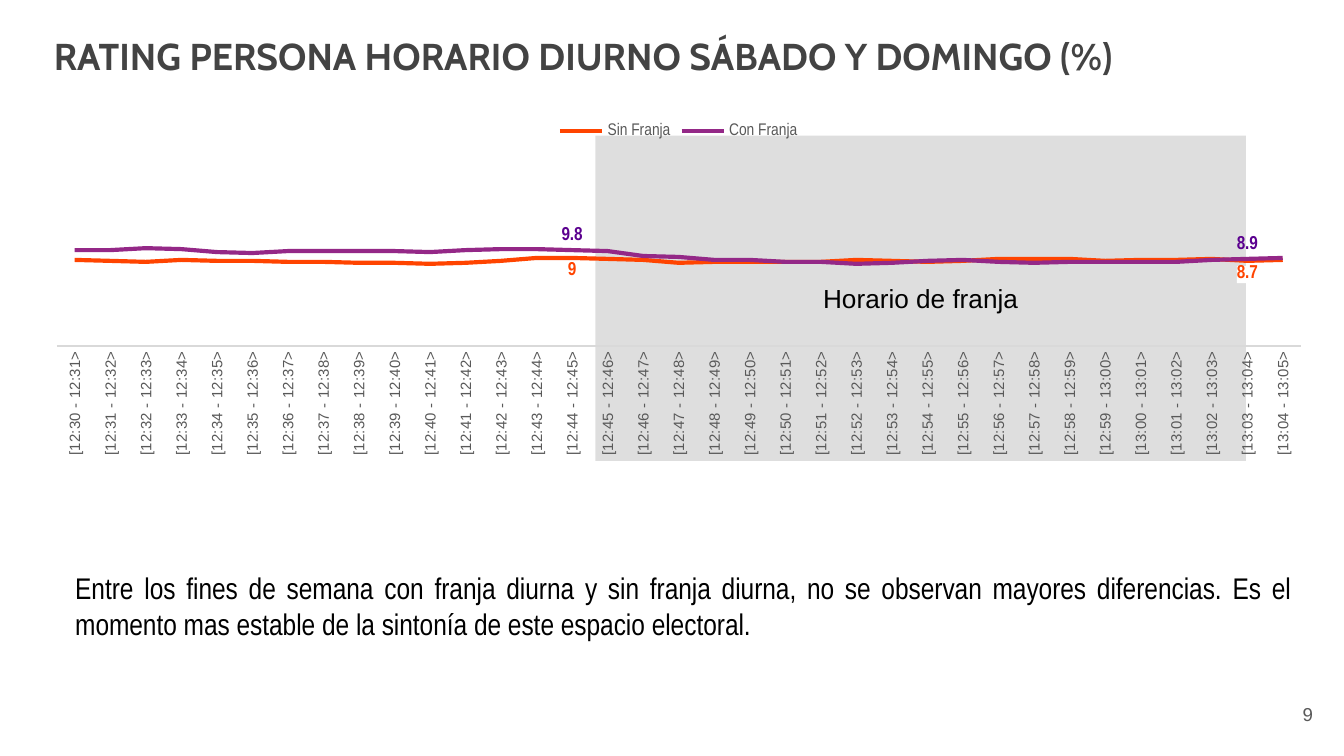
from dataclasses import dataclass

from lxml import etree
from pptx import Presentation
from pptx.chart.data import CategoryChartData
from pptx.dml.color import RGBColor
from pptx.enum.chart import XL_CHART_TYPE, XL_LABEL_POSITION, XL_LEGEND_POSITION, XL_TICK_MARK
from pptx.enum.shapes import MSO_SHAPE
from pptx.enum.text import MSO_ANCHOR, MSO_AUTO_SIZE, PP_ALIGN
from pptx.oxml import parse_xml
from pptx.oxml.ns import nsdecls, qn
from pptx.util import Pt

LINE = XL_CHART_TYPE.LINE
ABOVE, BELOW = XL_LABEL_POSITION.ABOVE, XL_LABEL_POSITION.BELOW
LEGEND_TOP = XL_LEGEND_POSITION.TOP
NO_TICK = XL_TICK_MARK.NONE
RECTANGLE = MSO_SHAPE.RECTANGLE
TOP, MIDDLE = MSO_ANCHOR.TOP, MSO_ANCHOR.MIDDLE
NO_AUTOFIT = MSO_AUTO_SIZE.NONE
LEFT, CENTER, RIGHT, JUSTIFY = PP_ALIGN.LEFT, PP_ALIGN.CENTER, PP_ALIGN.RIGHT, PP_ALIGN.JUSTIFY


@dataclass(frozen=True)
class TextStyle:
    size: float
    font: str
    color: str
    bold: bool = False

    def apply(self, font):
        font.size = Pt(self.size)
        font.name = self.font
        font.bold = self.bold
        font.color.rgb = RGBColor.from_string(self.color)


@dataclass(frozen=True)
class Theme:
    title: TextStyle = TextStyle(20, "Cabin", "434343", True)
    body: TextStyle = TextStyle(16, "Arial Narrow", "000000")
    band_label: TextStyle = TextStyle(14, "Arial", "000000")
    page: TextStyle = TextStyle(10, "Arial", "595959")
    chart: TextStyle = TextStyle(10, "Arial", "000000")
    axis: TextStyle = TextStyle(8, "Arial", "595959")
    legend: TextStyle = TextStyle(9, "Arial Narrow", "595959")
    without_label: TextStyle = TextStyle(10, "Arial Narrow", "FF4400", True)
    with_label: TextStyle = TextStyle(10, "Arial Narrow", "5B008F", True)
    without_line: str = "FF4400"
    with_line: str = "942887"
    axis_line: str = "D9D9D9"
    label_fill: str = "FFFFFF"
    band: str = "9B9B9B"
    band_alpha: int = 32


@dataclass(frozen=True)
class RatingSeries:
    name: str
    values: tuple
    color: str
    label: TextStyle
    position: object


class SlideBuilder:
    def __init__(self, slide, theme):
        self.slide = slide
        self.theme = theme

    def place(self, shape, box):
        shape.left, shape.top, shape.width, shape.height = map(Pt, box)

    def set_text(self, shape, text, style, alignment, anchor=TOP, inset=(7.2, 3.6)):
        frame = shape.text_frame
        frame.word_wrap = True
        frame.auto_size = NO_AUTOFIT
        frame.vertical_anchor = anchor
        frame.margin_left = frame.margin_right = Pt(inset[0])
        frame.margin_top = frame.margin_bottom = Pt(inset[1])
        paragraph = frame.paragraphs[0]
        paragraph.alignment = alignment
        paragraph.space_before = Pt(0)
        run = paragraph.add_run()
        run.text = text
        style.apply(run.font)
        return paragraph

    def title(self, text, box):
        shape = self.slide.shapes.title
        self.place(shape, box)
        self.set_text(shape, text, self.theme.title, LEFT, inset=(7.2, 7.2))

    def body(self, text, box):
        shape = self.slide.placeholders[1]
        self.place(shape, box)
        paragraph = self.set_text(shape, text, self.theme.body, JUSTIFY)
        properties = paragraph._p.get_or_add_pPr()
        properties.set("marL", "0")
        properties.set("indent", "0")
        etree.SubElement(properties, qn("a:buNone"))

    def page_number(self, text, box):
        shape = self.slide.shapes.add_textbox(*map(Pt, box))
        self.set_text(shape, text, self.theme.page, RIGHT, MIDDLE, (7.2, 7.2))

    def band(self, text, box):
        shape = self.slide.shapes.add_shape(RECTANGLE, *map(Pt, box))
        shape.shadow.inherit = False
        shape.line.fill.background()
        shape.fill.solid()
        shape.fill.fore_color.rgb = RGBColor.from_string(self.theme.band)
        color = shape._element.spPr.find(".//" + qn("a:srgbClr"))
        etree.SubElement(color, qn("a:alpha"), val=str(self.theme.band_alpha * 1000))
        self.set_text(shape, text, self.theme.band_label, CENTER, MIDDLE)

    def line_chart(self, categories, ratings, labelled, plot_area, box):
        data = CategoryChartData(number_format="General")
        data.categories = categories
        for rating in ratings:
            data.add_series(rating.name, rating.values)
        chart = self.slide.shapes.add_chart(LINE, *map(Pt, box), data).chart
        self.theme.chart.apply(chart.font)
        chart.has_title = False
        chart.has_legend = True
        chart.legend.position = LEGEND_TOP
        chart.legend.include_in_layout = False
        self.theme.legend.apply(chart.legend.font)
        self.axes(chart)
        self.plot_layout(chart, plot_area)
        for series, rating in zip(chart.plots[0].series, ratings):
            series.smooth = False
            series.format.line.width = Pt(2.25)
            series.format.line.color.rgb = RGBColor.from_string(rating.color)
            for index in labelled:
                label = series.points[index].data_label
                rating.label.apply(label.font)
                label.position = rating.position
        self.fill_last_label(chart.plots[0].series[0])

    def axes(self, chart):
        chart.plots[0].vary_by_categories = False
        value_axis = chart.value_axis
        value_axis.minimum_scale, value_axis.maximum_scale = 0, 20
        value_axis.has_major_gridlines = False
        value_axis.visible = False
        category_axis = chart.category_axis
        category_axis.major_tick_mark = category_axis.minor_tick_mark = NO_TICK
        self.theme.axis.apply(category_axis.tick_labels.font)
        category_axis._element.txPr.bodyPr.set("rot", "-5400000")
        category_axis.format.line.width = Pt(0.75)
        category_axis.format.line.color.rgb = RGBColor.from_string(self.theme.axis_line)

    def plot_layout(self, chart, plot_area):
        area = chart._chartSpace.find(".//" + qn("c:plotArea"))
        for old_layout in area.findall(qn("c:layout")):
            area.remove(old_layout)
        places = "".join(f'<c:{key} val="{value}"/>' for key, value in zip("xywh", plot_area))
        area.insert(0, parse_xml(
            f'<c:layout {nsdecls("c")}><c:manualLayout><c:layoutTarget val="inner"/>'
            f'<c:xMode val="edge"/><c:yMode val="edge"/>{places}</c:manualLayout></c:layout>'))

    def fill_last_label(self, series):
        label = series._element.findall(".//" + qn("c:dLbl"))[-1]
        label.find(qn("c:txPr")).addprevious(parse_xml(
            f'<c:spPr {nsdecls("c", "a")}><a:solidFill><a:srgbClr val="{self.theme.label_fill}"/>'
            '</a:solidFill></c:spPr>'))


def clock(minute):
    return f"{minute // 60}:{minute % 60:02d}"


def main():
    theme = Theme()
    presentation = Presentation()
    presentation.slide_width, presentation.slide_height = Pt(720), Pt(405)
    builder = SlideBuilder(presentation.slides.add_slide(presentation.slide_layouts[1]), theme)
    start = 12 * 60 + 30
    categories = [f"[{clock(minute)} - {clock(minute + 1)}>" for minute in range(start, start + 35)]
    ratings = (
        RatingSeries("Sin Franja", (
            8.8, 8.7, 8.6, 8.8, 8.7, 8.7, 8.6, 8.6, 8.5, 8.5, 8.4, 8.5, 8.7, 9, 9, 8.9, 8.8, 8.5,
            8.6, 8.6, 8.6, 8.6, 8.8, 8.7, 8.6, 8.7, 8.9, 8.9, 8.9, 8.7, 8.8, 8.8, 8.9, 8.7, 8.8,
        ), theme.without_line, theme.without_label, BELOW),
        RatingSeries("Con Franja", (
            9.8, 9.8, 10, 9.9, 9.6, 9.5, 9.7, 9.7, 9.7, 9.7, 9.6, 9.8, 9.9, 9.9, 9.8, 9.7, 9.2, 9.1,
            8.8, 8.8, 8.6, 8.6, 8.4, 8.5, 8.7, 8.8, 8.6, 8.5, 8.6, 8.6, 8.6, 8.6, 8.8, 8.9, 9,
        ), theme.with_line, theme.with_label, ABOVE),
    )
    builder.page_number("9", (667.5, 367, 43, 31))
    builder.title("RATING PERSONA HORARIO DIURNO SÁBADO Y DOMINGO (%)", (21.6, 10.8, 630.7, 44.6))
    builder.body(
        "Entre los fines de semana con franja diurna y sin franja diurna, no se observan mayores "
        "diferencias. Es el momento mas estable de la sintonía de este espacio electoral.",
        (33.1, 301.7, 666.7, 46))
    builder.band("Horario de franja", (319, 72.7, 348.5, 174.2))
    builder.line_chart(categories, ratings, (14, 33), (0.02, 0.12, 0.96, 0.55),
                       (16.6, 57.6, 694, 190.8))
    presentation.save("out.pptx")


if __name__ == "__main__":
    main()
